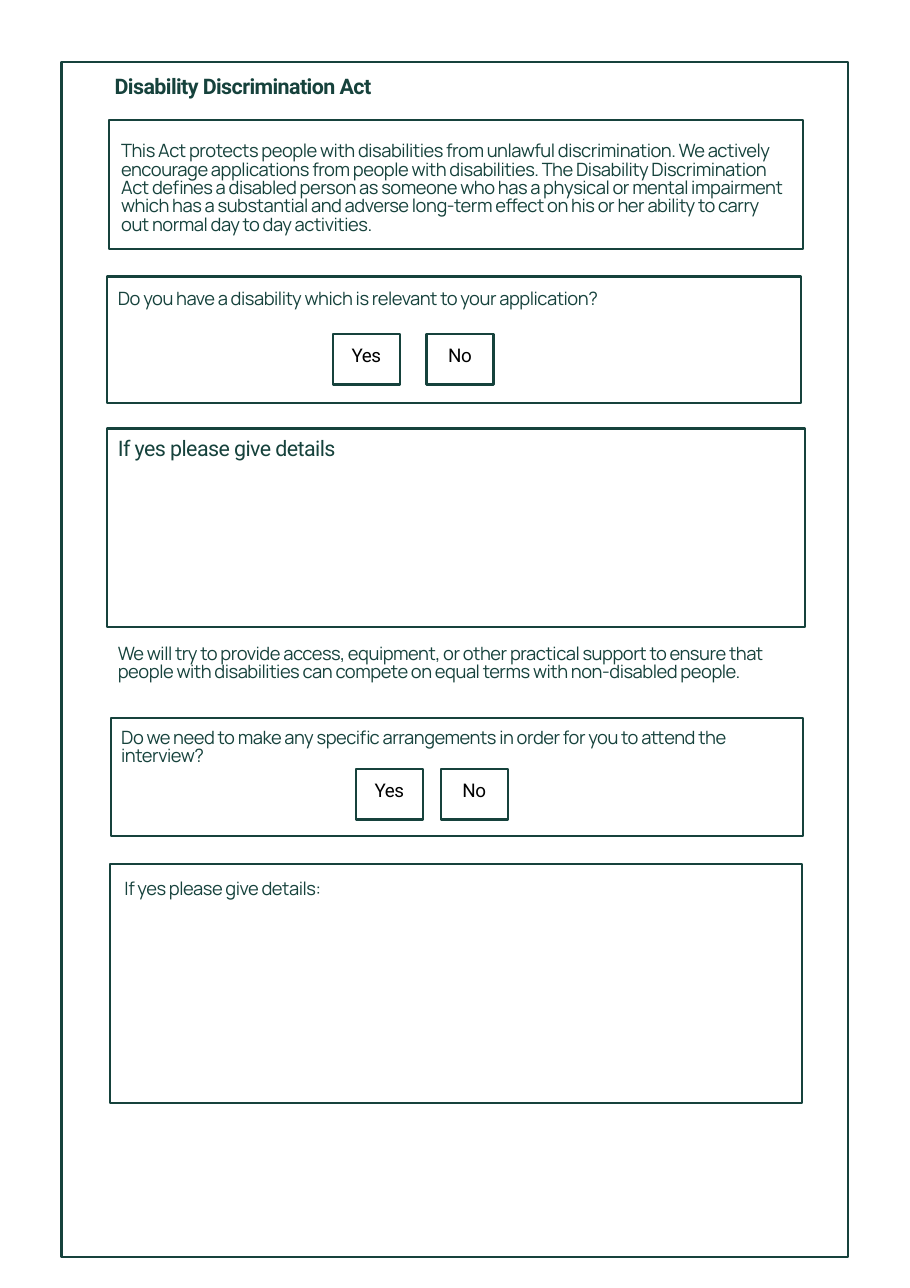
from pptx import Presentation
from pptx.dml.color import RGBColor
from pptx.enum.shapes import MSO_SHAPE
from pptx.enum.text import MSO_ANCHOR, MSO_AUTO_SIZE, PP_ALIGN
from pptx.util import Pt

SCALE = 9144  # EMU per px, 100 px to the inch
GREEN = "16423C"
BLACK = "000000"

# Frames: left, top, width, height
PAGE_BORDER = (56, 56, 714, 1085)
SECTION_FRAMES = [
    (99, 109, 630, 117),
    (97, 251, 630, 115),
    (97, 389, 634, 180),
    (101, 652, 628, 107),
    (100, 784, 628, 217),
]

# Form wording: text, place, font, size, letter spacing
FORM_TEXTS = [
    ("This Act protects people with disabilities from unlawful discrimination. "
     "We actively encourage applications from people with disabilities. "
     "The Disability Discrimination Act defines a disabled person as someone "
     "who has a physical or mental impairment which has a substantial and "
     "adverse long-term effect on his or her ability to carry out normal day "
     "to day activities.", (110, 130, 607, 86), "Manrope", 12, -0.3),
    ("Do you have a disability which is relevant to your application?",
     (107, 264, 592, 19), "Manrope", 12, -0.3),
    ("If yes please give details", (107, 399, 215, 24), "Roboto", 14, -0.4),
    ("We will try to provide access, equipment, or other practical support to "
     "ensure that people with disabilities can compete on equal terms with "
     "non-disabled people.", (107, 586, 607, 52), "Manrope", 12, -0.3),
    ("Do we need to make any specific arrangements in order for you to attend "
     "the interview?", (110, 662, 615, 36), "Manrope", 12, -0.3),
    ("If yes please give details:", (113, 799, 615, 19), "Manrope", 12, -0.3),
]

# Answer pairs: left of Yes, left of No, top
ANSWER_ROWS = [(302, 387, 303), (323, 400, 698)]


def px(length):
    return length * SCALE


def color(value):
    return RGBColor.from_string(value)


def set_insets(frame, left, top, right, bottom):
    frame.margin_left, frame.margin_top = px(left), px(top)
    frame.margin_right, frame.margin_bottom = px(right), px(bottom)


def write(frame, text, font, size, spacing, ink=GREEN, bold=False,
          align=PP_ALIGN.LEFT):
    frame.word_wrap = True
    frame.text = text
    para = frame.paragraphs[0]
    para.alignment = align
    para.line_spacing = Pt(size)
    para.space_before = Pt(0)
    span = para.runs[0]
    span.font.name = font
    span.font.size = Pt(size)
    span.font.bold = bold
    span.font.color.rgb = color(ink)
    span._r.get_or_add_rPr().set("spc", str(round(spacing * 100)))


def add_title(page, text):
    title = page.shapes.title
    title.left, title.top, title.width, title.height = map(px, (104, 70, 327, 24))
    frame = title.text_frame
    set_insets(frame, 0, 0, 0, 0)
    frame.vertical_anchor = MSO_ANCHOR.TOP
    frame.auto_size = MSO_AUTO_SIZE.NONE
    write(frame, text, "Roboto", 14, -0.4, bold=True)


def add_frame(page, place):
    box = page.shapes.add_shape(MSO_SHAPE.RECTANGLE, *map(px, place))
    box.shadow.inherit = False
    box.fill.background()
    box.line.color.rgb = color(GREEN)
    box.line.width = Pt(1.5)
    return box


def add_text(page, text, place, font, size, spacing):
    frame = page.shapes.add_textbox(*map(px, place)).text_frame
    set_insets(frame, 0, 0, 0, 0)
    write(frame, text, font, size, spacing)
    frame.auto_size = MSO_AUTO_SIZE.SHAPE_TO_FIT_TEXT


def add_answer(page, label, left, top):
    frame = add_frame(page, (left, top, 61, 46)).text_frame
    set_insets(frame, 6, 6, 6, 10)
    frame.vertical_anchor = MSO_ANCHOR.MIDDLE
    write(frame, label, "Roboto", 12.3, -0.3, ink=BLACK, align=PP_ALIGN.CENTER)


def main():
    deck = Presentation()
    deck.slide_width, deck.slide_height = px(826), px(1169)
    page = deck.slides.add_slide(deck.slide_layouts[5])

    # Heading and frames
    add_title(page, "Disability Discrimination Act")
    for place in [PAGE_BORDER, *SECTION_FRAMES]:
        add_frame(page, place)

    # Wording
    for entry in FORM_TEXTS:
        add_text(page, *entry)

    # Yes and No boxes
    for yes_left, no_left, top in ANSWER_ROWS:
        add_answer(page, "Yes", yes_left, top)
        add_answer(page, "No", no_left, top)

    deck.save("out.pptx")


if __name__ == "__main__":
    main()
